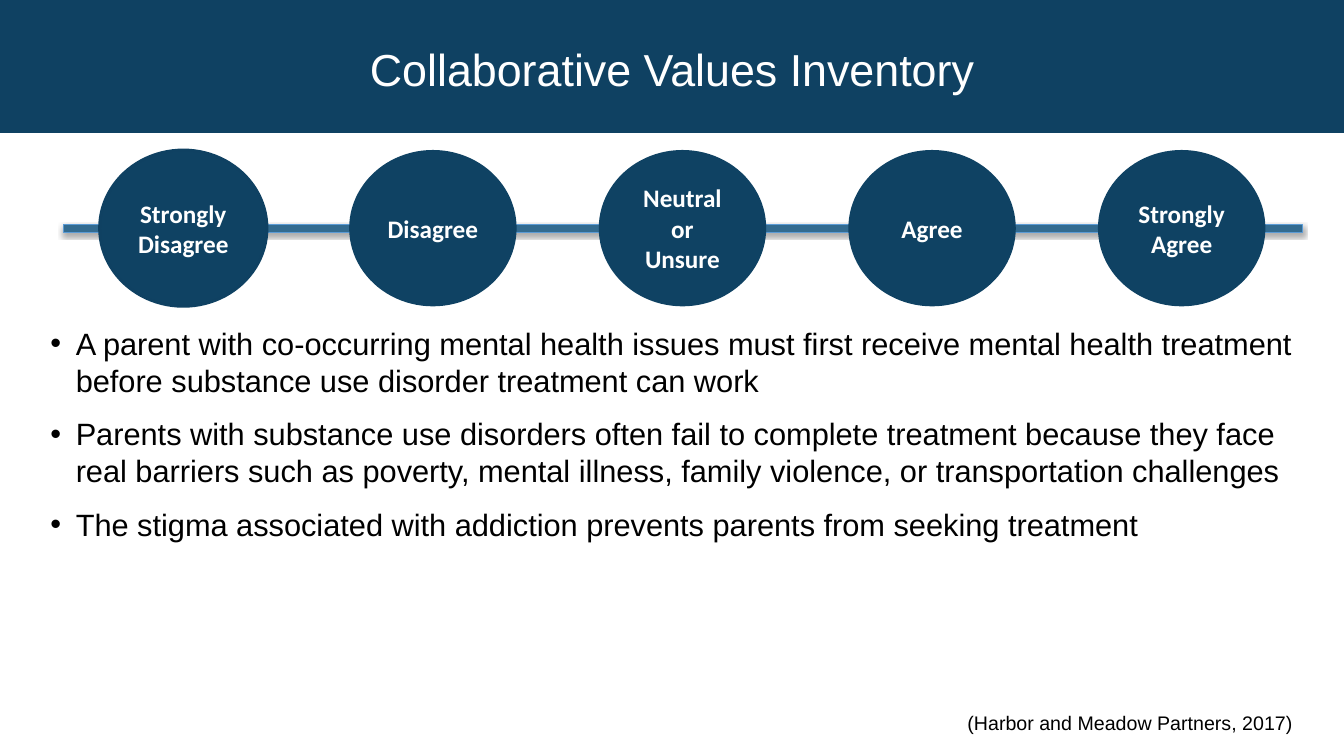
"""Build the Collaborative Values Inventory slide with its agreement scale."""
from dataclasses import dataclass

from lxml import etree
from pptx import Presentation
from pptx import util as u
from pptx.dml.color import RGBColor
from pptx.enum import shapes, text
from pptx.oxml.ns import qn

COLORS = {
    "banner": "0F4162",
    "circle": "0F4263",
    "rail": "336B90",
    "rail_edge": "5B9BD5",
    "white": "FFFFFF",
    "black": "000000",
}


@dataclass(frozen=True)
class Box:
    left: float
    top: float
    width: float
    height: float

    def lengths(self) -> list:
        return [u.Cm(side) for side in (self.left, self.top, self.width, self.height)]


@dataclass(frozen=True)
class Rating:
    label: str
    edge: str | None = None


RATINGS = [
    Rating("Strongly Disagree", edge="banner"),
    Rating("Disagree"),
    Rating("Neutral or Unsure"),
    Rating("Agree"),
    Rating("Strongly Agree"),
]
FIRST_CIRCLE = Box(2.51, 3.78, 4.22, 3.94)
CIRCLE_STEP = 6.29

STATEMENTS = [
    "A parent with co-occurring mental health issues must first receive mental health "
    "treatment before substance use disorder treatment can work",
    "Parents with substance use disorders often fail to complete treatment because they "
    "face real barriers such as poverty, mental illness, family violence, or "
    "transportation challenges",
    "The stigma associated with addiction prevents parents from seeking treatment",
]


def rgb(color: str) -> RGBColor:
    return RGBColor.from_string(COLORS[color])


def add_bullet(paragraph) -> None:
    props = paragraph._p.get_or_add_pPr()
    props.set("marL", str(u.Cm(0.64)))
    props.set("indent", str(u.Cm(-0.64)))
    etree.SubElement(props, qn("a:buFont"), typeface="Arial")
    etree.SubElement(props, qn("a:buChar"), char="•")


def write(frame, lines: list[str], *, size: float, color: str = "black",
          font: str = "Arial", bold: bool = False, align=text.PP_ALIGN.LEFT,
          anchor=text.MSO_ANCHOR.TOP, spacing: float = 0, bullet: bool = False) -> None:
    frame.word_wrap = True
    frame.vertical_anchor = anchor
    for index, line in enumerate(lines):
        paragraph = frame.add_paragraph() if index else frame.paragraphs[0]
        paragraph.alignment = align
        paragraph.space_before = paragraph.space_after = u.Pt(spacing)
        if bullet:
            add_bullet(paragraph)
        run = paragraph.add_run()
        run.text = line
        run.font.name, run.font.size, run.font.bold = font, u.Pt(size), bold
        run.font.color.rgb = rgb(color)


def add_figure(parent, kind, box: Box, fill: str, edge: str | None = None,
               edge_width: float = 2):
    figure = parent.add_shape(kind, *box.lengths())
    figure.shadow.inherit = False
    figure.fill.solid()
    figure.fill.fore_color.rgb = rgb(fill)
    if edge:
        figure.line.color.rgb = rgb(edge)
        figure.line.width = u.Pt(edge_width)
    else:
        figure.line.fill.background()
    return figure


def add_drop_shadow(figure) -> None:
    effects = figure._element.spPr.find(qn("a:effectLst"))
    shadow = etree.SubElement(
        effects, qn("a:outerShdw"), blurRad=str(u.Pt(3.1)), dist=str(u.Pt(1.8)),
        dir="5400000", rotWithShape="0")
    tint = etree.SubElement(shadow, qn("a:srgbClr"), val=COLORS["black"])
    etree.SubElement(tint, qn("a:alpha"), val="35000")


def add_scale(slide) -> None:
    scale = slide.shapes.add_group_shape().shapes
    rail = add_figure(scale, shapes.MSO_SHAPE.RECTANGLE, Box(1.6, 5.66, 31.22, 0.2),
                      "rail", "rail_edge", 0.75)
    add_drop_shadow(rail)
    for index, rating in enumerate(RATINGS):
        place = Box(FIRST_CIRCLE.left + index * CIRCLE_STEP, FIRST_CIRCLE.top,
                    FIRST_CIRCLE.width, FIRST_CIRCLE.height)
        circle = add_figure(scale, shapes.MSO_SHAPE.OVAL, place, "circle", rating.edge)
        write(circle.text_frame, [rating.label], size=18, color="white", font="Calibri",
              bold=True, align=text.PP_ALIGN.CENTER, anchor=text.MSO_ANCHOR.MIDDLE)


def add_text(slide, box: Box, lines: list[str], **style) -> None:
    write(slide.shapes.add_textbox(*box.lengths()).text_frame, lines, **style)


def main() -> None:
    deck = Presentation()
    deck.slide_width, deck.slide_height = u.Cm(33.87), u.Cm(19.05)
    slide = deck.slides.add_slide(deck.slide_layouts[6])

    add_figure(slide.shapes, shapes.MSO_SHAPE.RECTANGLE, Box(0, 0, 33.87, 3.33),
               "banner", "banner")
    add_scale(slide)
    add_text(slide, Box(24.13, 17.78, 9.14, 0.86),
             ["(Harbor and Meadow Partners, 2017)"], size=14)
    add_text(slide, Box(1.02, 8.05, 31.85, 8.46), STATEMENTS,
             size=22, spacing=6, bullet=True)
    add_text(slide, Box(1.02, 0.15, 31.85, 3.18), ["Collaborative Values Inventory"],
             size=32, color="white", align=text.PP_ALIGN.CENTER,
             anchor=text.MSO_ANCHOR.MIDDLE, spacing=3)
    deck.save("out.pptx")


if __name__ == "__main__":
    main()
